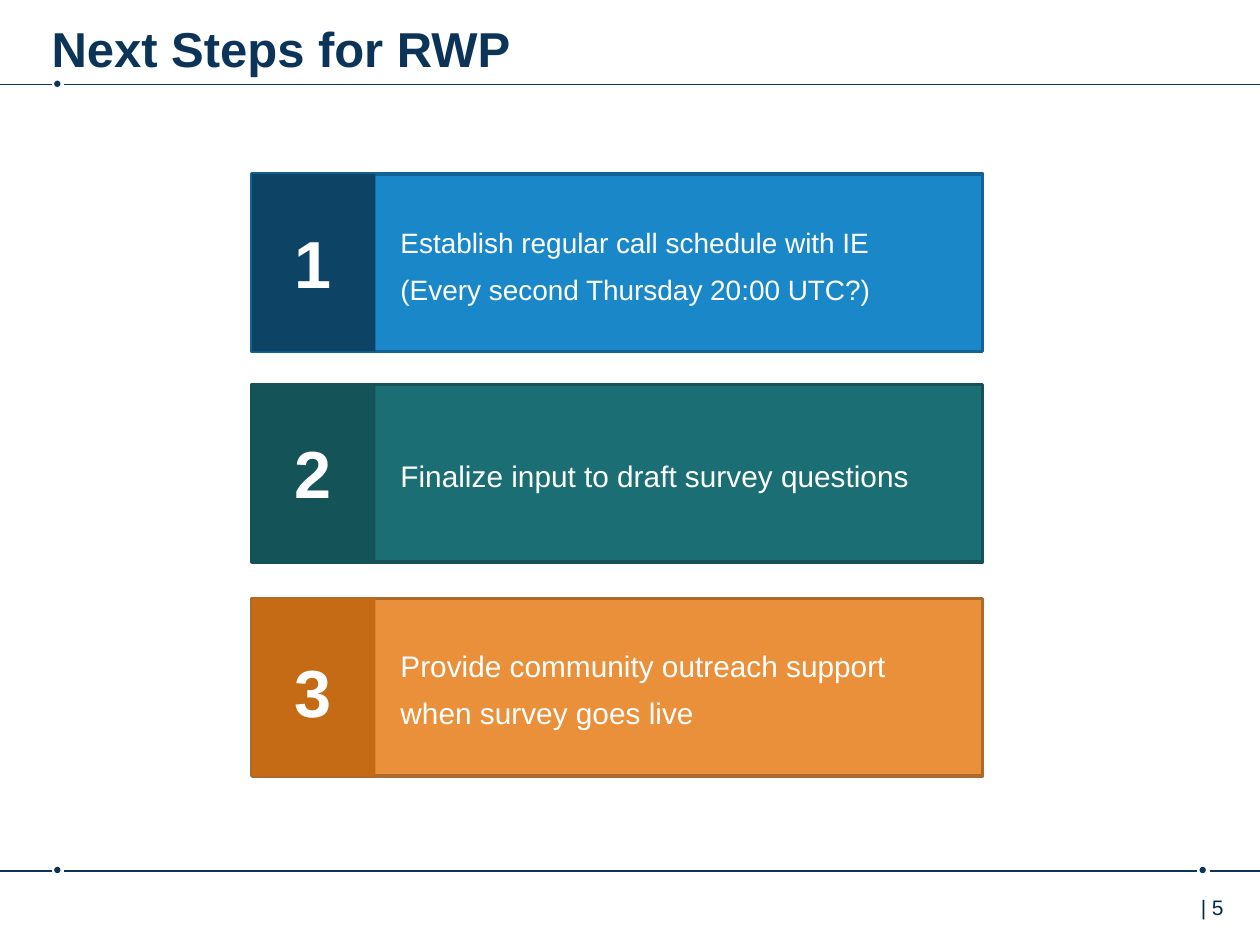
from pptx import Presentation
from pptx.dml.color import RGBColor
from pptx.enum.shapes import MSO_CONNECTOR, MSO_SHAPE
from pptx.enum.text import MSO_ANCHOR
from pptx.oxml.ns import qn
from pptx.util import Pt
from lxml import etree

PX = 9144  # 100 px to the inch
LINE = MSO_CONNECTOR.STRAIGHT
RECT = MSO_SHAPE.RECTANGLE
OVAL = MSO_SHAPE.OVAL
TOP = MSO_ANCHOR.TOP

WHITE = RGBColor(0xFF, 0xFF, 0xFF)
NAVY = RGBColor(0x0C, 0x34, 0x58)
INK = RGBColor(0x00, 0x2B, 0x49)
BLUE = RGBColor(0x1A, 0x87, 0xC9)
BLUE_EDGE = RGBColor(0x13, 0x64, 0x95)
BLUE_DARK = RGBColor(0x0D, 0x43, 0x64)
TEAL = RGBColor(0x1B, 0x6F, 0x74)
TEAL_EDGE = RGBColor(0x14, 0x52, 0x56)
TEAL_DARK = RGBColor(0x14, 0x53, 0x57)
GOLD = RGBColor(0xEA, 0x90, 0x3A)
GOLD_EDGE = RGBColor(0xAD, 0x6B, 0x2B)
GOLD_DARK = RGBColor(0xC6, 0x6B, 0x15)


class Deck:
    font = "Arial"

    def __init__(self, wide, high):
        self.prs = Presentation()
        self.prs.slide_width = wide * PX
        self.prs.slide_height = high * PX
        self.slide = self.prs.slides.add_slide(self.prs.slide_layouts[6])

    def shape(self, kind, box, fill, edge=None):
        item = self.slide.shapes.add_shape(kind, *(n * PX for n in box))
        item.shadow.inherit = False
        item.fill.solid()
        item.fill.fore_color.rgb = fill
        if edge is None:
            item.line.fill.background()
        else:
            item.line.color.rgb = edge
            item.line.width = Pt(2)

    def line(self, left, right, y):
        item = self.slide.shapes.add_connector(
            LINE, left * PX, y * PX, right * PX, y * PX)
        item.line.color.rgb = NAVY
        item.line.width = Pt(1)
        etree.SubElement(item._element.spPr, qn("a:effectLst"))

    def rule(self, y, dots):
        """Draw a line across the slide, broken around each dot."""
        left = 0
        for dot in dots:
            self.shape(OVAL, (dot - 2, y - 3, 5, 5), NAVY)
            self.line(left, dot - 4, y)
            left = dot + 6
        self.line(left, 1000, y)

    def text(self, box, words, size, color=WHITE, bold=False, pad=(10, 5),
             pitch=None):
        item = self.slide.shapes.add_textbox(*(n * PX for n in box))
        frame = item.text_frame
        frame.word_wrap = True
        frame.vertical_anchor = TOP
        frame.margin_left, frame.margin_top = (n * PX for n in pad)
        frame.text = words
        for para in frame.paragraphs:
            if pitch:
                para.line_spacing = Pt(pitch)
            for run in para.runs:
                run.font.name = self.font
                run.font.size = Pt(size)
                run.font.bold = bold
                run.font.color.rgb = color

    def step(self, num, top, colors, words, size, area):
        """Draw a numbered card; area is the text's top, width and height."""
        fill, edge, dark = colors
        y, wide, high = area
        self.shape(RECT, (200, top, 580, 141), fill, edge)
        self.shape(RECT, (200, top, 98, 141), dark)
        drop = 32 if num == 3 else 28
        self.text((224, top + drop, 389, 74), str(num), 38, bold=True,
                  pad=(10, 10))
        self.text((308, y, wide, high), words, size, pitch=26.6)


def main():
    deck = Deck(1000, 750)
    deck.rule(67, [45])
    deck.rule(691, [45, 954])
    deck.text((929, 705, 87, 40), "| 5", 12, INK, pad=(24, 5))
    deck.text((41, 5, 876, 49), "Next Steps for RWP", 28, NAVY, True,
              pad=(0, 10))
    steps = [
        (138, (BLUE, BLUE_EDGE, BLUE_DARK),
         "Establish regular call schedule with IE\n"
         "(Every second Thursday 20:00 UTC?)", 16, (164, 438, 86)),
        (305, (TEAL, TEAL_EDGE, TEAL_DARK),
         "Finalize input to draft survey questions", 17, (350, 447, 48)),
        (475, (GOLD, GOLD_EDGE, GOLD_DARK),
         "Provide community outreach support when survey goes live", 17,
         (501, 438, 86)),
    ]
    for num, step in enumerate(steps, 1):
        deck.step(num, *step)
    deck.prs.save("out.pptx")


if __name__ == "__main__":
    main()
